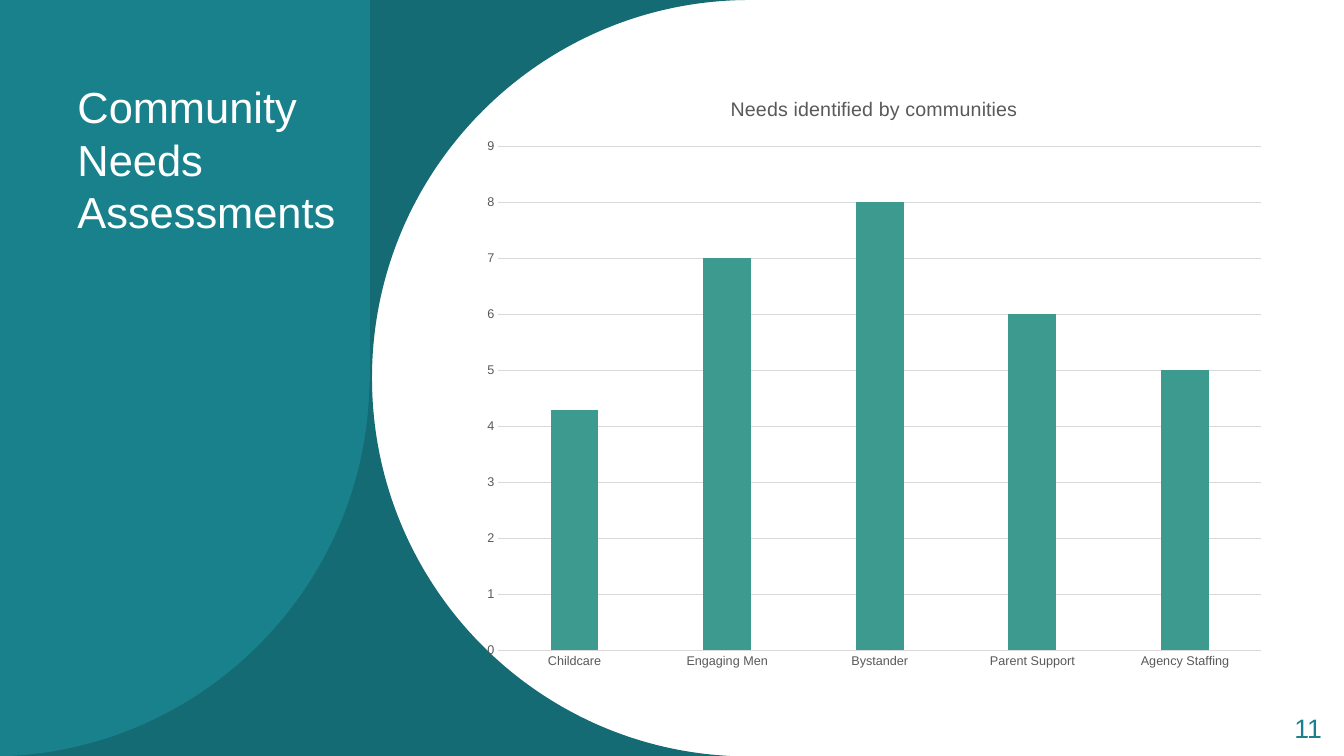
from lxml import etree
from pptx import Presentation
from pptx.chart.data import CategoryChartData
from pptx.dml.color import RGBColor
from pptx.enum.chart import XL_CHART_TYPE, XL_TICK_MARK
from pptx.enum.text import MSO_ANCHOR, PP_ALIGN
from pptx.oxml.ns import qn
from pptx.util import Pt

PX = 9144  # 100 px to the inch
WIDTH, HEIGHT = 1333, 750
FONT = "Arial"
COLUMNS = XL_CHART_TYPE.COLUMN_CLUSTERED
NO_TICK = XL_TICK_MARK.NONE
LEFT, RIGHT = PP_ALIGN.LEFT, PP_ALIGN.RIGHT
TOP, CENTER = MSO_ANCHOR.TOP, MSO_ANCHOR.MIDDLE
COLORS = {name: RGBColor.from_string(value) for name, value in {
    "teal": "18818C",
    "dark teal": "146B73",
    "bar": "3C9A8F",
    "gray": "595959",
    "grid": "D9D9D9",
    "white": "FFFFFF",
}.items()}

presentation = Presentation()
presentation.slide_width = WIDTH * PX
presentation.slide_height = HEIGHT * PX
slide = presentation.slides.add_slide(presentation.slide_layouts[6])


def style_font(font, size, color):
    font.name = FONT
    font.size = Pt(size)
    font.bold = False
    font.color.rgb = COLORS[color]


# Curved side panels from the top left corner.
# A segment of one point is a line, one of three points a Bezier curve.
panels = [
    ("dark teal", [
        [(744, 0)],
        [(537, 0), (369, 168), (369, 375)],
        [(369, 576), (526, 740), (724, 750)],
        [(0, HEIGHT)],
    ]),
    ("teal", [
        [(367, 0)],
        [(367, 375)],
        [(366, 394)],
        [(356, 586), (202, 740), (10, 750)],
        [(0, HEIGHT)],
    ]),
]
for color, segments in panels:
    builder = slide.shapes.build_freeform(0, 0, scale=PX)
    builder.add_line_segments([segment[-1] for segment in segments])
    panel = builder.convert_to_shape()
    lines = list(panel._element.iter(qn("a:lnTo")))
    for line, segment in zip(lines, segments):
        if len(segment) == 3:
            line_end = line[0]
            curve = etree.Element(qn("a:cubicBezTo"))
            # Path units are px, as given to the builder
            for x, y in segment[:2]:
                etree.SubElement(curve, qn("a:pt"), x=str(x), y=str(y))
            line.getparent().replace(line, curve)
            curve.append(line_end)
    panel.shadow.inherit = False
    panel.fill.solid()
    panel.fill.fore_color.rgb = COLORS[color]
    panel.line.fill.background()

# Title and slide number
texts = [
    ("Community Needs Assessments", (67, 75, 293, 400), 31, "white", LEFT, TOP, 1.0),
    ("11", (1245, 704, 76, 40), 19, "teal", RIGHT, CENTER, 0.9),
]
for text, box, size, color, alignment, anchor, spacing in texts:
    text_box = slide.shapes.add_textbox(*(length * PX for length in box))
    frame = text_box.text_frame
    frame.word_wrap = True
    frame.vertical_anchor = anchor
    frame.text = text
    paragraph = frame.paragraphs[0]
    paragraph.alignment = alignment
    paragraph.line_spacing = spacing
    style_font(paragraph.runs[0].font, size, color)

# Chart of needs
needs = CategoryChartData()
needs.categories = ["Childcare", "Engaging Men", "Bystander", "Parent Support",
                    "Agency Staffing"]
needs.add_series("Series 1", [4.3, 7, 8, 6, 5])
chart_box = (467, 75, 800, 601)
chart = slide.shapes.add_chart(
    COLUMNS, *(length * PX for length in chart_box), needs).chart
style_font(chart.font, 10, "gray")
chart.has_legend = False
chart.has_title = True
chart.chart_title.include_in_layout = False
chart.chart_title.text_frame.text = "Needs identified by communities"
style_font(chart.chart_title.text_frame.paragraphs[0].runs[0].font, 14, "gray")

plot = chart.plots[0]
plot.gap_width = 219
plot.overlap = -27
plot.vary_by_categories = False
bar_fill = plot.series[0].format.fill
bar_fill.solid()
bar_fill.fore_color.rgb = COLORS["bar"]

category_axis, value_axis = chart.category_axis, chart.value_axis
for axis in (category_axis, value_axis):
    axis.major_tick_mark = axis.minor_tick_mark = NO_TICK
    style_font(axis.tick_labels.font, 9, "gray")
value_axis.minimum_scale, value_axis.maximum_scale = 0, 9
value_axis.major_unit = 1
value_axis.has_major_gridlines = True
value_axis.format.line.fill.background()
for line in (category_axis.format.line, value_axis.major_gridlines.format.line):
    line.color.rgb = COLORS["grid"]
    line.width = Pt(0.75)

# Fixed plot area, as fractions of the chart
plot_area = plot._element.getparent()
for old_layout in plot_area.findall(qn("c:layout")):
    plot_area.remove(old_layout)
layout = etree.Element(qn("c:layout"))
manual_layout = etree.SubElement(layout, qn("c:manualLayout"))
for tag, value in [("layoutTarget", "inner"), ("xMode", "edge"), ("yMode", "edge"),
                   ("x", "0.034"), ("y", "0.117"), ("w", "0.946"), ("h", "0.832")]:
    etree.SubElement(manual_layout, qn(f"c:{tag}")).set("val", value)
plot_area.insert(0, layout)

presentation.save("out.pptx")
